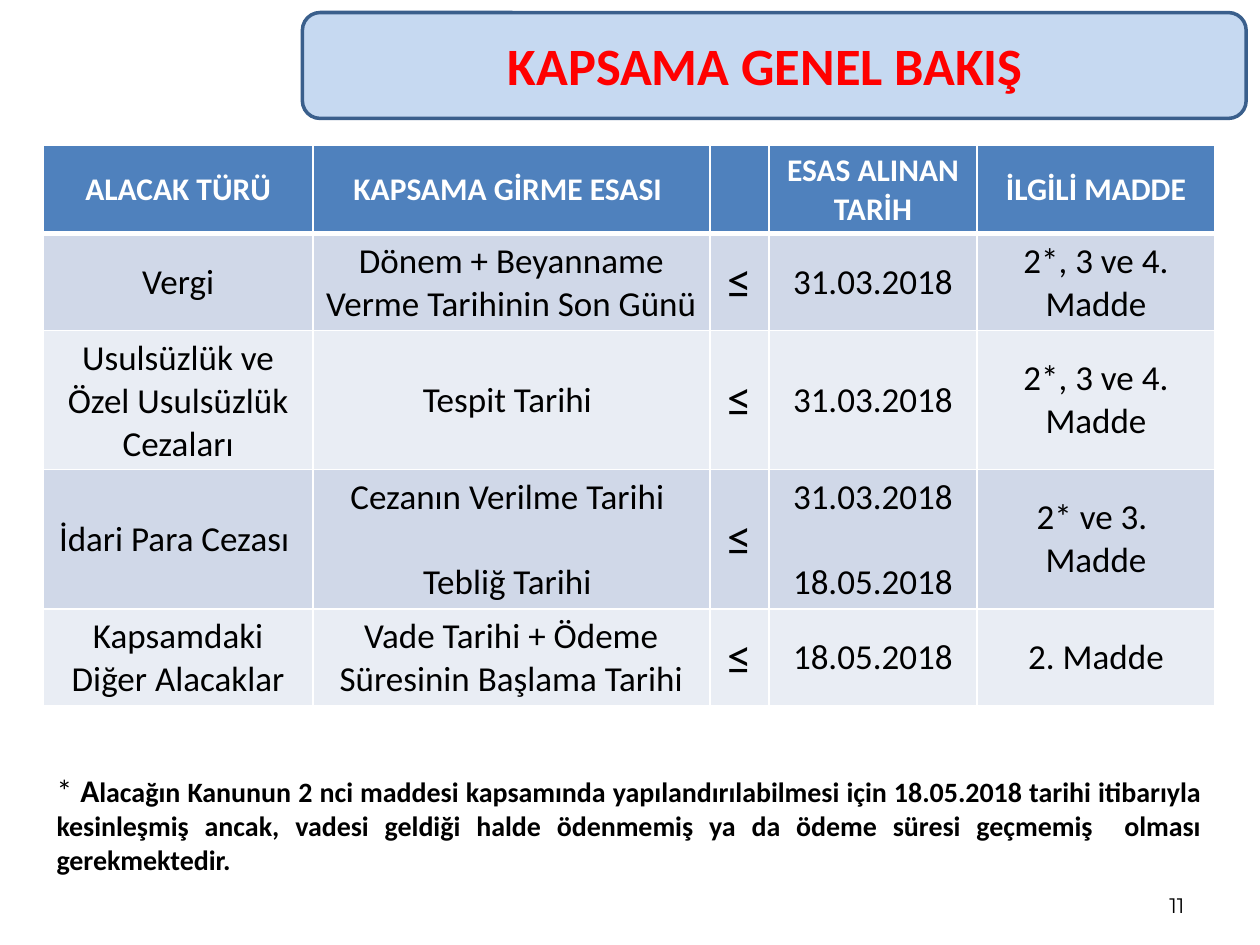
from lxml.etree import SubElement
from pptx import Presentation
from pptx.dml.color import RGBColor
from pptx.enum.shapes import MSO_SHAPE
from pptx.enum.text import MSO_ANCHOR, MSO_AUTO_SIZE, PP_ALIGN
from pptx.oxml.ns import qn
from pptx.util import Pt

BLACK = RGBColor(0x00, 0x00, 0x00)
WHITE = RGBColor(0xFF, 0xFF, 0xFF)
RED = RGBColor(0xFF, 0x00, 0x00)
BANNER_FILL = RGBColor(0xC6, 0xD9, 0xF1)
BANNER_LINE = RGBColor(0x3A, 0x5F, 0x8C)
HEADER_FILL = RGBColor(0x4F, 0x81, 0xBD)
BANDS = (RGBColor(0xD0, 0xD8, 0xE8), RGBColor(0xE9, 0xED, 0xF4))

COLUMN_WIDTHS = (154, 226.8, 33.9, 118.8, 136.1)
ROW_HEIGHTS = (49.7, 55.4, 79.4, 79.4, 55.1)
LINE_GAP = 24.4
ROWS = (
    ("ALACAK TÜRÜ", "KAPSAMA GİRME ESASI ", "", "ESAS ALINAN TARİH", "İLGİLİ MADDE"),
    ("Vergi", "Dönem + Beyanname Verme Tarihinin Son Günü ", "≤", "31.03.2018",
     "2*, 3 ve 4. Madde"),
    ("Usulsüzlük ve Özel Usulsüzlük Cezaları", "Tespit Tarihi ", "≤", "31.03.2018",
     "2*, 3 ve 4. Madde"),
    ("İdari Para Cezası ", "Cezanın Verilme Tarihi \nTebliğ Tarihi ", "≤",
     "31.03.2018\n18.05.2018", "2* ve 3. \nMadde"),
    ("Kapsamdaki Diğer Alacaklar", "Vade Tarihi + Ödeme Süresinin Başlama Tarihi", "≤",
     "18.05.2018", "2. Madde"),
)
SPACED_COLUMNS = (1, 3)
FOOTNOTE = (
    ("* ", 18, False),
    ("A", 18, True),
    ("lacağın Kanunun 2 nci maddesi kapsamında yapılandırılabilmesi için 18.05.2018 "
     "tarihi itibarıyla kesinleşmiş ancak, vadesi geldiği halde ödenmemiş ya da ödeme "
     "süresi geçmemiş  olması gerekmektedir.", 16, True),
)


class SlideBuilder:
    def __init__(self, slide, font="Calibri"):
        self.slide = slide
        self.font = font

    def style(self, run, size, color=BLACK, bold=False, font=None):
        run.font.name = font or self.font
        run.font.size = Pt(size)
        run.font.bold = bold
        run.font.color.rgb = color

    def banner(self, left, top, width, height):
        banner = self.slide.shapes.add_shape(
            MSO_SHAPE.ROUNDED_RECTANGLE, Pt(left), Pt(top), Pt(width), Pt(height))
        banner.shadow.inherit = False
        banner.fill.solid()
        banner.fill.fore_color.rgb = BANNER_FILL
        banner.line.color.rgb = BANNER_LINE
        banner.line.width = Pt(2)

    def text(self, left, top, width, height, pieces, align, color=BLACK, font=None,
             wrap=True, anchor=MSO_ANCHOR.TOP, grow=True):
        """Add one paragraph made of (words, size, bold) pieces."""
        frame = self.slide.shapes.add_textbox(
            Pt(left), Pt(top), Pt(width), Pt(height)).text_frame
        frame.word_wrap = wrap
        frame.vertical_anchor = anchor
        frame.auto_size = MSO_AUTO_SIZE.SHAPE_TO_FIT_TEXT if grow else MSO_AUTO_SIZE.NONE
        paragraph = frame.paragraphs[0]
        paragraph.alignment = align
        for words, size, bold in pieces:
            run = paragraph.add_run()
            run.text = words
            self.style(run, size, color, bold, font)

    def borders(self, cell, top, bottom):
        properties = cell._tc.get_or_add_tcPr()
        for side, width in (("L", 1), ("R", 1), ("T", top), ("B", bottom)):
            line = SubElement(properties, qn(f"a:ln{side}"), w=str(Pt(width)))
            fill = SubElement(line, qn("a:solidFill"))
            SubElement(fill, qn("a:srgbClr"), val=str(WHITE))

    def cell(self, cell, words, row, column):
        header = row == 0
        self.borders(cell, top=3 if row == 1 else 1, bottom=3 if header else 1)
        cell.fill.solid()
        cell.fill.fore_color.rgb = HEADER_FILL if header else BANDS[(row - 1) % 2]
        cell.vertical_anchor = MSO_ANCHOR.MIDDLE
        cell.text_frame.text = words
        size = 18 if header else 28 if words == "≤" else 20
        for index, paragraph in enumerate(cell.text_frame.paragraphs):
            paragraph.alignment = PP_ALIGN.CENTER
            if index and column in SPACED_COLUMNS:
                paragraph.space_before = Pt(LINE_GAP)
            for run in paragraph.runs:
                self.style(run, size, WHITE if header else BLACK, header)

    def table(self, left, top, rows, widths, heights):
        table = self.slide.shapes.add_table(
            len(rows), len(widths), Pt(left), Pt(top),
            Pt(sum(widths)), Pt(sum(heights))).table
        for column, width in zip(table.columns, widths):
            column.width = Pt(width)
        for table_row, height in zip(table.rows, heights):
            table_row.height = Pt(height)
        for row, entries in enumerate(rows):
            for column, words in enumerate(entries):
                self.cell(table.cell(row, column), words, row, column)


def main():
    deck = Presentation()
    deck.slide_width, deck.slide_height = Pt(720), Pt(540)
    builder = SlideBuilder(deck.slides.add_slide(deck.slide_layouts[6]))
    builder.banner(172.8, 7.2, 539.3, 60.5)
    builder.text(516.2, 491.8, 167.8, 36, [("11", 12, False)], PP_ALIGN.RIGHT,
                 font="Montserrat", anchor=MSO_ANCHOR.BOTTOM, grow=False)
    builder.text(281.5, 15.1, 311.8, 43.9, [("KAPSAMA GENEL BAKIŞ", 30, True)],
                 PP_ALIGN.CENTER, color=RED, wrap=False)
    builder.table(24.8, 83.1, ROWS, COLUMN_WIDTHS, ROW_HEIGHTS)
    builder.text(25.2, 437, 668.9, 67.7, FOOTNOTE, PP_ALIGN.JUSTIFY)
    deck.save("out.pptx")


if __name__ == "__main__":
    main()
